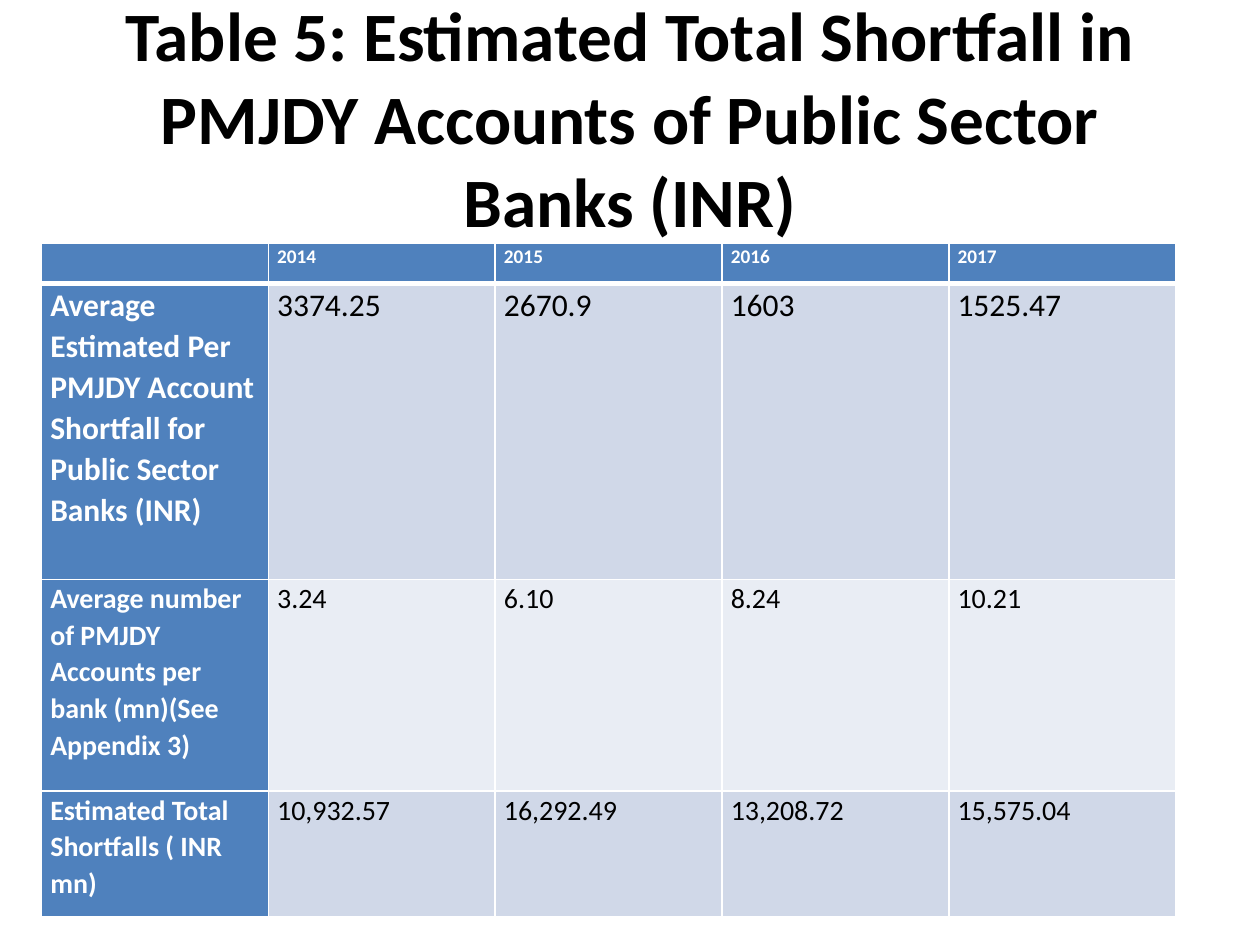
from dataclasses import dataclass
from typing import Any

from lxml import etree
from pptx import Presentation
from pptx.dml.color import RGBColor
from pptx.enum.text import MSO_ANCHOR, PP_ALIGN
from pptx.oxml.ns import qn
from pptx.util import Inches, Pt

CENTER, LEFT = PP_ALIGN.CENTER, PP_ALIGN.LEFT
MIDDLE = MSO_ANCHOR.MIDDLE
TITLE = "Table 5: Estimated Total Shortfall in PMJDY Accounts of Public Sector Banks (INR)"
ROWS = [
    ["", "2014", "2015", "2016", "2017"],
    ["Average Estimated Per PMJDY Account Shortfall for Public Sector Banks (INR)",
     "3374.25", "2670.9", "1603", "1525.47"],
    ["Average number of PMJDY Accounts per bank (mn)(See Appendix 3)",
     "3.24", "6.10", "8.24", "10.21"],
    ["Estimated Total\nShortfalls ( INR mn)",
     "10,932.57", "16,292.49", "13,208.72", "15,575.04"],
]
ROW_HEIGHTS = [0.32, 2.35, 1.68, 1]
ROW_SIZES = [11, 18, 16, 16]


def color(value):
    return RGBColor.from_string(value)


def write(frame, text, *, size, ink, font, bold=False, align=LEFT, spacing=1.0):
    for index, line in enumerate(text.split("\n")):
        para = frame.add_paragraph() if index else frame.paragraphs[0]
        para.alignment = align
        para.line_spacing = spacing
        span = para.add_run()
        span.text = line
        span.font.name = font
        span.font.size = Pt(size)
        span.font.bold = bold
        span.font.color.rgb = color(ink)


@dataclass
class SlideBuilder:
    """Draws styled elements on the current slide."""

    page: Any
    font: str = "Calibri"
    ink: str = "000000"
    light: str = "FFFFFF"
    accent: str = "4F81BD"
    bands: tuple = ("E9EDF4", "D0D8E8")

    def title(self, text, left, top, width, height):
        box = self.page.shapes.add_textbox(
            Inches(left), Inches(top), Inches(width), Inches(height))
        frame = box.text_frame
        frame.word_wrap = True
        frame.vertical_anchor = MIDDLE
        write(frame, text, size=39.6, ink=self.ink, font=self.font,
              bold=True, align=CENTER)

    def table(self, rows, left, top, width, heights, sizes):
        table = self.page.shapes.add_table(
            len(rows), len(rows[0]), Inches(left), Inches(top),
            Inches(width), Inches(sum(heights))).table
        for row_index, values in enumerate(rows):
            table.rows[row_index].height = Inches(heights[row_index])
            for column_index, text in enumerate(values):
                heading = row_index == 0 or column_index == 0
                self.cell(table.cell(row_index, column_index), text,
                          row_index, sizes[row_index], heading)

    def cell(self, cell, text, row_index, size, heading):
        cell.margin_left = cell.margin_right = Inches(0.07)
        cell.margin_top = cell.margin_bottom = 0
        write(cell.text_frame, text, size=size, font=self.font, bold=heading,
              ink=self.light if heading else self.ink, spacing=1.07)
        self.borders(cell, top=3 if row_index == 1 else 1,
                     bottom=3 if row_index == 0 else 1)
        cell.fill.solid()
        cell.fill.fore_color.rgb = color(
            self.accent if heading else self.bands[row_index % 2])

    def borders(self, cell, top, bottom):
        properties = cell._tc.get_or_add_tcPr()
        for side, weight in (("L", 1), ("R", 1), ("T", top), ("B", bottom)):
            line = etree.SubElement(properties, qn(f"a:ln{side}"), w=str(Pt(weight)))
            fill = etree.SubElement(line, qn("a:solidFill"))
            etree.SubElement(fill, qn("a:srgbClr"), val=self.light)


def main():
    deck = Presentation()
    deck.slide_width, deck.slide_height = Inches(10), Inches(7.5)
    builder = SlideBuilder(deck.slides.add_slide(deck.slide_layouts[6]))
    builder.title(TITLE, 0.5, 0.3, 9, 1.25)
    builder.table(ROWS, 0.33, 1.93, 9, ROW_HEIGHTS, ROW_SIZES)
    deck.save("out.pptx")


if __name__ == "__main__":
    main()
